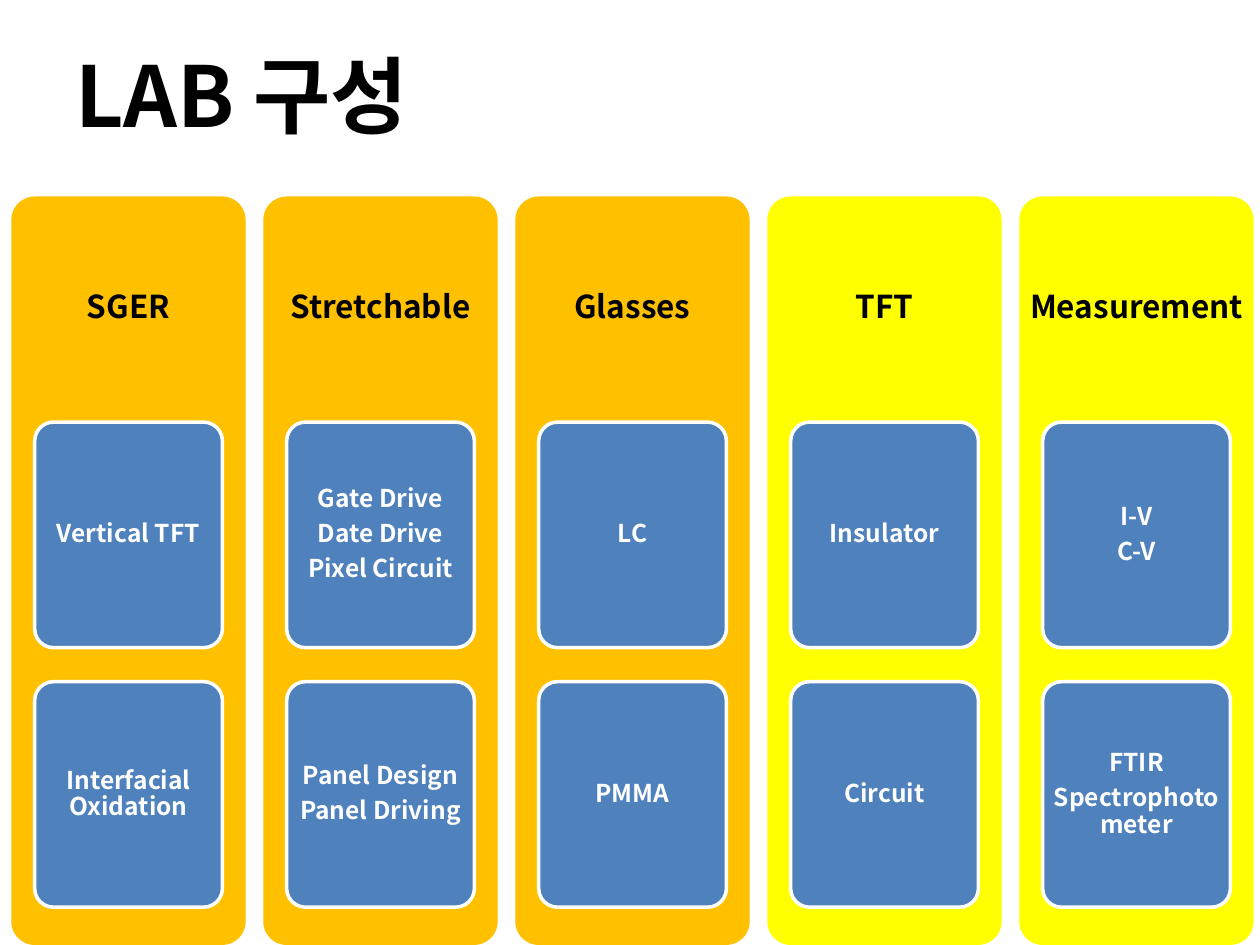
from dataclasses import dataclass

from pptx import Presentation
from pptx.dml.color import RGBColor
from pptx.enum.shapes import MSO_SHAPE
from pptx.enum.text import MSO_ANCHOR, PP_ALIGN
from pptx.oxml.ns import qn
from pptx.util import Inches, Pt


@dataclass(frozen=True)
class Theme:
    font: str = "Noto Sans CJK KR"
    black: str = "000000"
    white: str = "FFFFFF"
    orange: str = "FFC000"
    yellow: str = "FFFF00"
    blue: str = "4F81BD"
    title_size: int = 48
    header_size: int = 18
    card_size: int = 14
    card_line: int = 2


@dataclass(frozen=True)
class Column:
    header: str
    fill: str
    cards: tuple[tuple[str, ...], ...]


@dataclass(frozen=True)
class Box:
    left: float
    top: float
    width: float
    height: float

    def lengths(self) -> list[int]:
        return [Inches(v) for v in (self.left, self.top, self.width, self.height)]


THEME = Theme()

COLUMNS = (
    Column("SGER", THEME.orange, (("Vertical TFT",), ("Interfacial Oxidation",))),
    Column("Stretchable", THEME.orange, (
        ("Gate Drive", "Date Drive", "Pixel Circuit"),
        ("Panel Design", "Panel Driving"),
    )),
    Column("Glasses", THEME.orange, (("LC",), ("PMMA",))),
    Column("TFT", THEME.yellow, (("Insulator",), ("Circuit",))),
    Column("Measurement", THEME.yellow, (
        ("I-V", "C-V"),
        ("FTIR", "Spectrophotometer"),
    )),
)

COLUMN_LEFT, COLUMN_TOP, COLUMN_PITCH = 0.09, 1.56, 2.0
COLUMN_WIDTH, COLUMN_HEIGHT, HEADER_HEIGHT = 1.86, 5.94, 1.78
CARD_TOP, CARD_PITCH, CARD_WIDTH, CARD_HEIGHT = 3.35, 2.06, 1.49, 1.79


def set_format(target, values: dict) -> None:
    for name, value in values.items():
        setattr(target, name, value)


def write_lines(sp, lines: tuple[str, ...], size: int, color: str) -> None:
    """Write one bold paragraph for each line."""
    tf = sp.text_frame
    for i, line in enumerate(lines):
        p = tf.paragraphs[0] if i == 0 else tf.add_paragraph()
        r = p.add_run()
        r.text = line
        set_format(r.font, {"name": THEME.font, "size": Pt(size), "bold": True})
        r.font.color.rgb = RGBColor.from_string(color)
        ea = r.font._element.makeelement(qn("a:ea"), {"typeface": THEME.font})
        r.font._element.find(qn("a:latin")).addnext(ea)


def center_text(sp, size: int, inset_x: float, inset_y: float) -> None:
    """Centre the text both ways, with tight lines and the given insets."""
    tf = sp.text_frame
    set_format(tf, {
        "word_wrap": True,
        "vertical_anchor": MSO_ANCHOR.MIDDLE,
        "margin_left": Inches(inset_x),
        "margin_right": Inches(inset_x),
        "margin_top": Inches(inset_y),
        "margin_bottom": Inches(inset_y),
    })
    for p in tf.paragraphs:
        set_format(p, {
            "alignment": PP_ALIGN.CENTER,
            "line_spacing": 0.9,
            "space_after": Pt(size * 0.35),
        })


def add_round_rect(s, box: Box, fill: str):
    sp = s.shapes.add_shape(MSO_SHAPE.ROUNDED_RECTANGLE, *box.lengths())
    sp.adjustments[0] = 0.1
    sp.shadow.inherit = False
    sp.fill.solid()
    sp.fill.fore_color.rgb = RGBColor.from_string(fill)
    sp.line.fill.background()
    return sp


def add_card(s, box: Box, lines: tuple[str, ...]) -> None:
    sp = add_round_rect(s, box, THEME.blue)
    sp.line.color.rgb = RGBColor.from_string(THEME.white)
    sp.line.width = Pt(THEME.card_line)
    write_lines(sp, lines, THEME.card_size, THEME.white)
    center_text(sp, THEME.card_size, 0.04, 0.03)


def add_column(s, column: Column, left: float) -> None:
    add_round_rect(s, Box(left, COLUMN_TOP, COLUMN_WIDTH, COLUMN_HEIGHT), column.fill)
    header = Box(left, COLUMN_TOP, COLUMN_WIDTH, HEADER_HEIGHT)
    sp = s.shapes.add_textbox(*header.lengths())
    write_lines(sp, (column.header,), THEME.header_size, THEME.black)
    center_text(sp, THEME.header_size, 0.07, 0.07)
    card_left = left + (COLUMN_WIDTH - CARD_WIDTH) / 2
    for row, lines in enumerate(column.cards):
        top = CARD_TOP + row * CARD_PITCH
        add_card(s, Box(card_left, top, CARD_WIDTH, CARD_HEIGHT), lines)


def add_title(s, text: str) -> None:
    sp = s.shapes.add_textbox(*Box(0.5, 0.3, 9, 1.25).lengths())
    sp.text_frame.word_wrap = True
    write_lines(sp, (text,), THEME.title_size, THEME.black)


def main() -> None:
    prs = Presentation()
    set_format(prs, {"slide_width": Inches(10), "slide_height": Inches(7.5)})
    s = prs.slides.add_slide(prs.slide_layouts[6])
    for i, column in enumerate(COLUMNS):
        add_column(s, column, COLUMN_LEFT + i * COLUMN_PITCH)
    add_title(s, "LAB 구성")
    prs.save("out.pptx")


if __name__ == "__main__":
    main()
